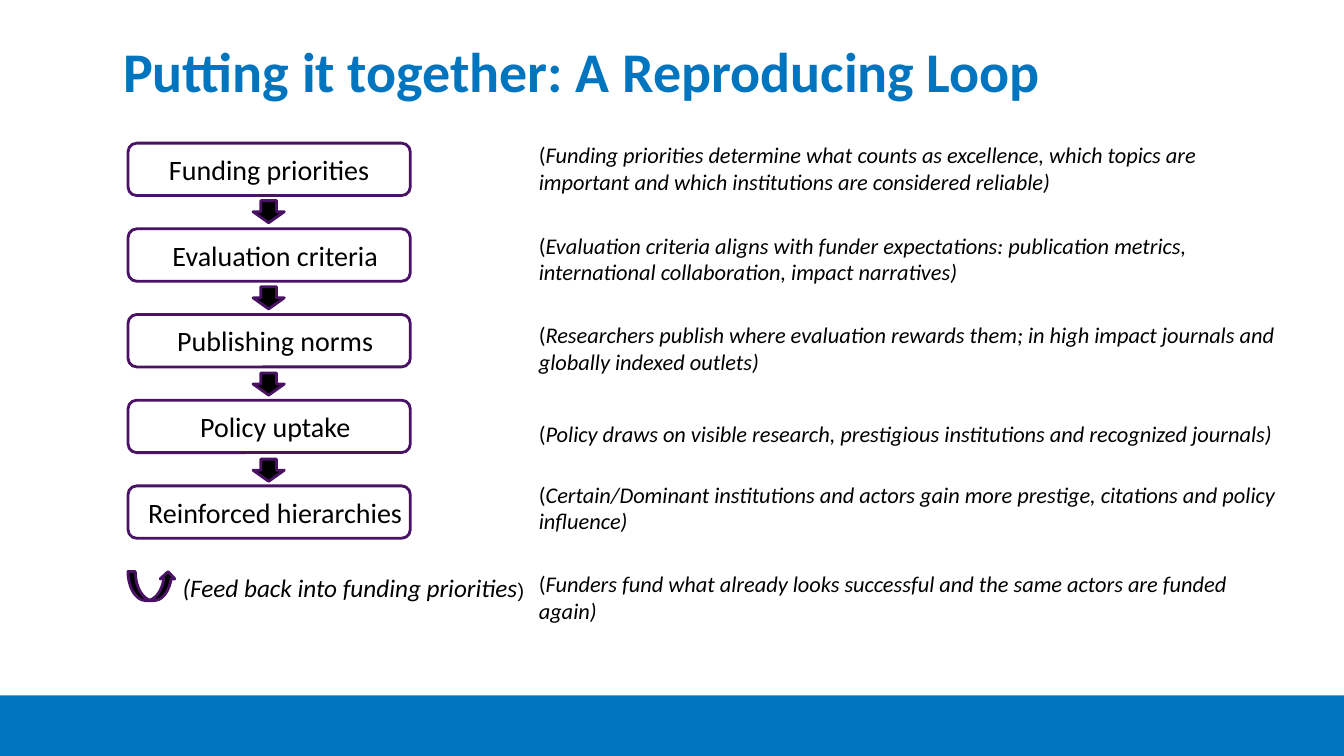
from pptx import Presentation
from pptx.dml.color import RGBColor
from pptx.enum.shapes import MSO_SHAPE
from pptx.enum.text import MSO_ANCHOR, MSO_AUTO_SIZE, PP_ALIGN
from pptx.util import Inches, Pt

RECT, ROUNDED = MSO_SHAPE.RECTANGLE, MSO_SHAPE.ROUNDED_RECTANGLE
DOWN, CURVED_UP = MSO_SHAPE.DOWN_ARROW, MSO_SHAPE.CURVED_UP_ARROW
LEFT, CENTER = PP_ALIGN.LEFT, PP_ALIGN.CENTER
MIDDLE, BOTTOM = MSO_ANCHOR.MIDDLE, MSO_ANCHOR.BOTTOM
BLUE, PURPLE, BLACK = "0075BF", "491265", "000000"

# Stages of the loop: name, left and right text margin
stages = [
    ("Funding priorities", 0.1, 0.1),
    ("Evaluation criteria", 0.12, 0),
    ("Publishing norms", 0.12, 0),
    ("Policy uptake", 0.12, 0),
    ("Reinforced hierarchies", 0.12, 0),
]
# Explanations: top, text after the upright bracket
explanations = [
    (1.4, "Funding priorities determine what counts as excellence, which topics are "
          "important and which institutions are considered reliable)"),
    (2.3, "Evaluation criteria aligns with funder expectations: publication metrics, "
          "international collaboration, impact narratives)"),
    (3.19, "Researchers publish where evaluation rewards them; in high impact journals "
           "and globally indexed outlets)"),
    (4.04, "Policy draws on visible research, prestigious institutions and recognized journals)"),
    (4.77, "Certain/Dominant institutions and actors gain more prestige, citations and "
           "policy influence)"),
    (5.66, "Funders fund what already looks successful and the same actors are funded again)"),
]

prs = Presentation()
prs.slide_width, prs.slide_height = Inches(13.33), Inches(7.5)
slide = prs.slides.add_slide(prs.slide_layouts[5])


def add_block(preset, left, top, width, height, fill=None, line=None):
    block = slide.shapes.add_shape(
        preset, Inches(left), Inches(top), Inches(width), Inches(height))
    block.shadow.inherit = False
    if fill:
        block.fill.solid()
        block.fill.fore_color.rgb = RGBColor.from_string(fill)
    else:
        block.fill.background()
    if line:
        block.line.color.rgb = RGBColor.from_string(line)
        block.line.width = Pt(2)
    else:
        block.line.fill.background()
    return block


def write(block, runs, align, anchor=MIDDLE, color=BLACK, **margins):
    """Fill a block with one paragraph; each run is a text and its font values."""
    frame = block.text_frame
    frame.word_wrap = True
    frame.auto_size = MSO_AUTO_SIZE.NONE
    frame.vertical_anchor = anchor
    for side, inches in margins.items():
        setattr(frame, "margin_" + side, Inches(inches))
    paragraph = frame.paragraphs[0]
    paragraph.alignment = align
    for text, values in runs:
        run = paragraph.add_run()
        run.text = text
        run.font.color.rgb = RGBColor.from_string(color)
        for key, value in ({"name": "Calibri"} | values).items():
            setattr(run.font, key, value)
    return paragraph


# Footer band
add_block(RECT, 0, 6.9, 13.33, 0.6, fill=BLUE)

# Title
title = slide.shapes.title
title.left, title.top = Inches(1.17), Inches(0.06)
title.width, title.height = Inches(11), Inches(1.03)
heading = write(title, [("Putting it together: A Reproducing Loop", {"size": Pt(40), "bold": True})],
                LEFT, BOTTOM, BLUE, left=0.05, right=0.05, top=0.05, bottom=0.05)
heading.line_spacing = 0.9

# Stage boxes with arrows between them
for i, (stage, left_margin, right_margin) in enumerate(stages):
    box = add_block(ROUNDED, 1.27, 1.42 + 0.85 * i, 2.8, 0.52, line=PURPLE)
    write(box, [(stage, {"size": Pt(20)})], CENTER,
          left=left_margin, right=right_margin, top=0, bottom=0)
    if i < len(stages) - 1:
        add_block(DOWN, 2.51, 1.99 + 0.855 * i, 0.31, 0.22, BLACK, PURPLE)

# Feedback arrow and its label
add_block(CURVED_UP, 1.27, 5.67, 0.47, 0.29, BLACK, PURPLE)
feedback = slide.shapes.add_textbox(Inches(1.54), Inches(5.57), Inches(3.93), Inches(0.52))
write(feedback, [("(Feed back into funding priorities", {"size": Pt(18), "italic": True}),
                 (")", {"size": Pt(14), "name": "Arial"})], CENTER)

# Explanations on the right
for top, explanation in explanations:
    note = add_block(ROUNDED, 5.22, top, 7.59, 0.53)
    write(note, [("(", {"size": Pt(16)}),
                 (explanation, {"size": Pt(16), "italic": True})], LEFT)

prs.save("out.pptx")
